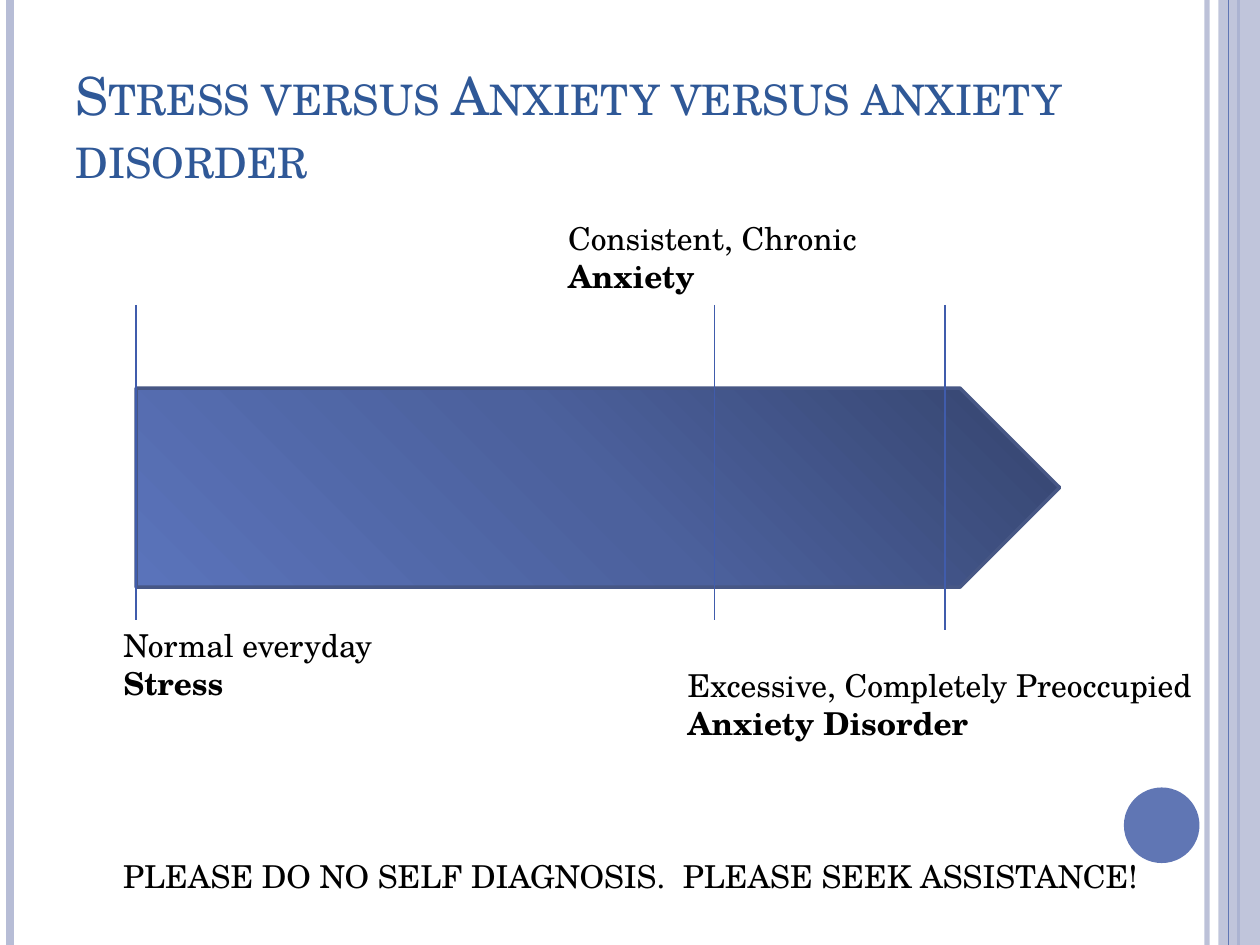
from dataclasses import dataclass

from pptx import Presentation
from pptx.dml.color import RGBColor
from pptx.enum.shapes import MSO_CONNECTOR, MSO_SHAPE
from pptx.enum.text import MSO_ANCHOR, MSO_AUTO_SIZE, PP_ALIGN
from pptx.oxml import parse_xml
from pptx.oxml.ns import nsdecls, qn
from pptx.util import Inches, Pt


@dataclass(frozen=True)
class Theme:
    """Hold the colours, font and type sizes of the slide."""
    font: str = "TeX Gyre Schola"
    title: str = "2F5897"
    text: str = "000000"
    pale: str = "B7BDD6"
    accent: str = "6076B4"
    marker: str = "405CAC"
    outline: str = "475785"
    gradient: tuple = ((0, "35446E"), (50, "4C619D"), (100, "5A73BA"))
    title_size: int = 30
    text_size: int = 18


THEME = Theme()


def rgb(value):
    """Turn a hex string into a colour."""
    return RGBColor.from_string(value)


def set_alpha(element, percent):
    """Make the solid colour inside an element partly transparent."""
    color = next(element.iter(qn("a:srgbClr")))
    color.append(parse_xml(f'<a:alpha {nsdecls("a")} val="{percent * 1000}"/>'))


def add_run(p, text, size, color, bold=None):
    """Add one styled run to a paragraph."""
    r = p.add_run()
    r.text = text
    r.font.name = THEME.font
    r.font.size = Pt(size)
    r.font.bold = bold
    r.font.color.rgb = rgb(color)
    return r


def add_vertical(s, x, top, bottom, color, width, alpha=None):
    """Draw a vertical line at x."""
    line = s.shapes.add_connector(MSO_CONNECTOR.STRAIGHT, Inches(x), Inches(top),
                                  Inches(x), Inches(bottom))
    line.line.color.rgb = rgb(color)
    line.line.width = Pt(width)
    if alpha:
        set_alpha(line.line._ln, alpha)
    line._element.spPr.append(parse_xml(f'<a:effectLst {nsdecls("a")}/>'))


def add_block(s, kind, x, y, w, h, color):
    """Add a preset shape with a plain fill and no outline."""
    sp = s.shapes.add_shape(kind, Inches(x), Inches(y), Inches(w), Inches(h))
    sp.shadow.inherit = False
    sp.fill.solid()
    sp.fill.fore_color.rgb = rgb(color)
    sp.line.fill.background()
    return sp


def add_frame(s):
    """Draw the side bands and the corner disc."""
    add_vertical(s, 9.58, 0, 7.5, THEME.pale, 3, 93)
    add_vertical(s, 0.08, 0, 7.5, THEME.pale, 4.5)
    add_vertical(s, 9.83, 0, 7.5, THEME.accent, 1.5)
    band = add_block(s, MSO_SHAPE.RECTANGLE, 9.67, 0, 0.33, 7.5, THEME.pale)
    set_alpha(band._element.spPr, 87)
    add_vertical(s, 9.75, 0, 7.5, THEME.accent, 0.75)
    add_block(s, MSO_SHAPE.OVAL, 8.92, 6.25, 0.6, 0.6, THEME.accent)


def set_title(s, text):
    """Place and fill the title in small capitals."""
    sp = s.shapes.title
    sp.left, sp.top, sp.width, sp.height = map(Inches, (0.5, 0.3, 8.17, 1.25))
    tf = sp.text_frame
    tf.auto_size = MSO_AUTO_SIZE.NONE
    tf.vertical_anchor = MSO_ANCHOR.BOTTOM
    p = tf.paragraphs[0]
    p.alignment = PP_ALIGN.LEFT
    r = add_run(p, text, THEME.title_size, THEME.title)
    r.font._element.set("cap", "small")


def add_scale_arrow(s, x, y, w, h):
    """Add the arrow, shaded outwards from its top right corner."""
    sp = add_block(s, MSO_SHAPE.PENTAGON, x, y, w, h, THEME.accent)
    sp.line.color.rgb = rgb(THEME.outline)
    sp.line.width = Pt(2)
    stops = "".join(f'<a:gs pos="{pos * 1000}"><a:srgbClr val="{color}"/></a:gs>'
                    for pos, color in THEME.gradient)
    gradient = parse_xml(
        f'<a:gradFill {nsdecls("a")} rotWithShape="1"><a:gsLst>{stops}</a:gsLst>'
        '<a:path path="circle"><a:fillToRect l="100000" b="100000"/></a:path></a:gradFill>')
    spPr = sp._element.spPr
    spPr.replace(spPr.find(qn("a:solidFill")), gradient)


def add_label(s, x, y, w, h, text, term=None):
    """Add a line of text with an optional bold term below it."""
    tf = s.shapes.add_textbox(Inches(x), Inches(y), Inches(w), Inches(h)).text_frame
    tf.word_wrap = False
    tf.auto_size = MSO_AUTO_SIZE.SHAPE_TO_FIT_TEXT
    add_run(tf.paragraphs[0], text, THEME.text_size, THEME.text)
    if term:
        add_run(tf.add_paragraph(), term, THEME.text_size, THEME.text, True)


def main():
    """Build and save the slide."""
    prs = Presentation()
    prs.slide_width, prs.slide_height = Inches(10), Inches(7.5)
    s = prs.slides.add_slide(prs.slide_layouts[5])
    add_frame(s)
    set_title(s, "Stress versus Anxiety versus anxiety disorder")
    add_scale_arrow(s, 1.08, 3.08, 7.33, 1.58)
    for x, bottom in ((1.08, 4.92), (5.67, 4.92), (7.5, 5)):
        add_vertical(s, x, 2.42, bottom, THEME.marker, 1)
    add_label(s, 0.88, 4.92, 2.21, 0.71, "Normal everyday", "Stress")
    add_label(s, 4.41, 1.69, 2.52, 0.71, "Consistent, Chronic", "Anxiety")
    add_label(s, 5.36, 5.24, 4.27, 0.71, "Excessive, Completely Preoccupied",
              "Anxiety Disorder")
    add_label(s, 0.88, 6.75, 8.3, 0.4,
              "PLEASE DO NO SELF DIAGNOSIS.  PLEASE SEEK ASSISTANCE!")
    prs.save("out.pptx")


if __name__ == "__main__":
    main()
